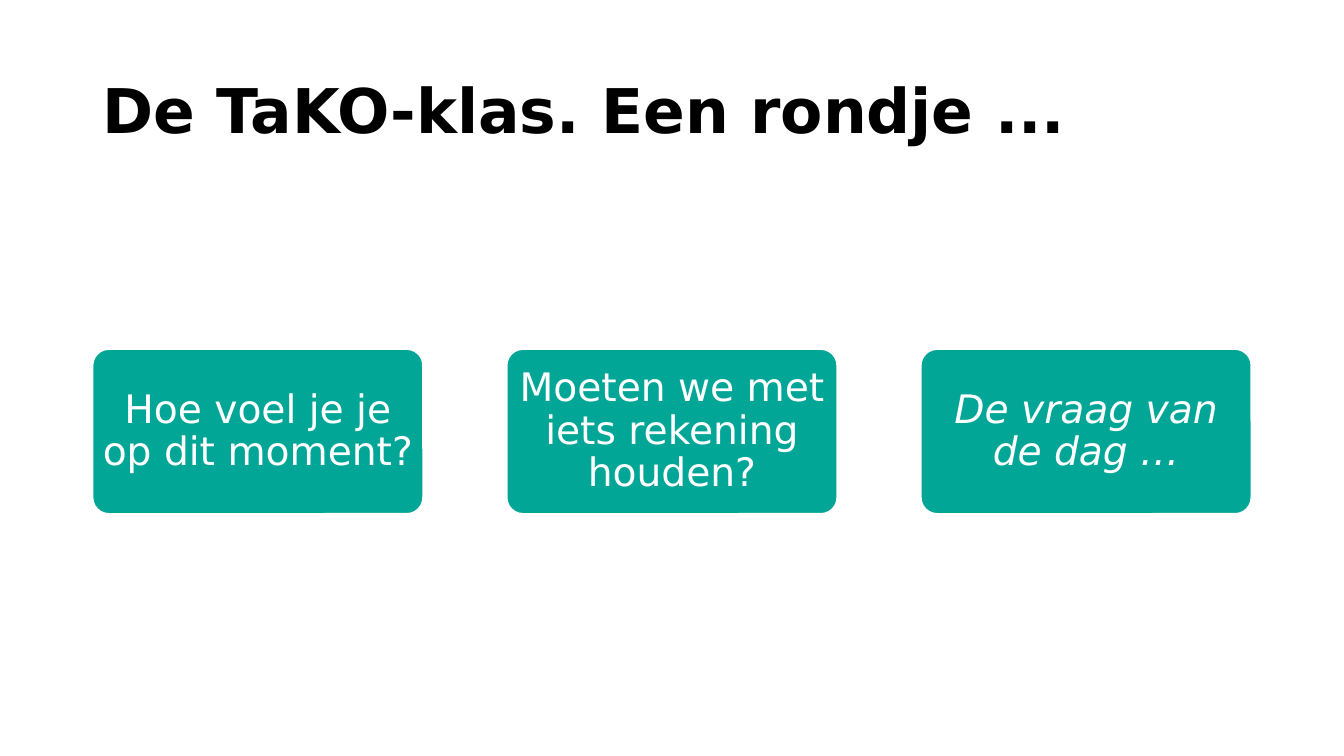
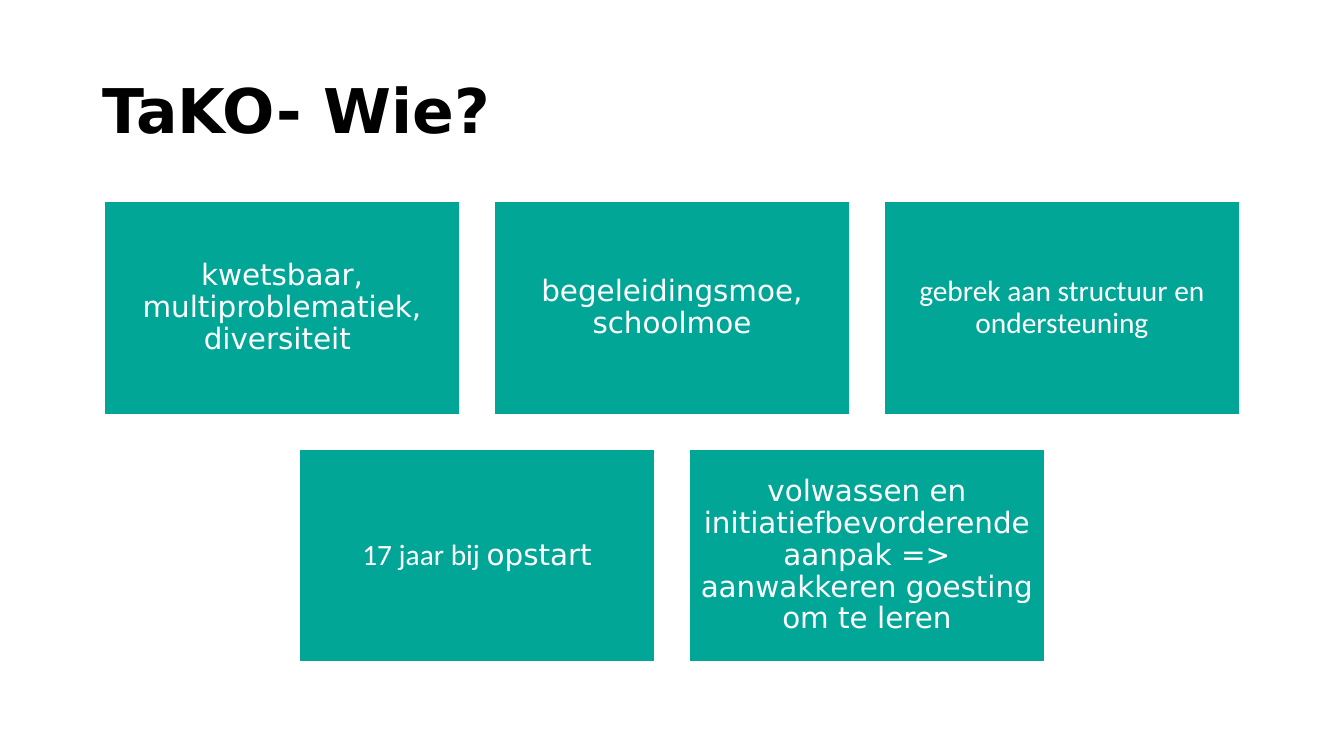
"""Build two slides with a bold title and centred rows of teal cards."""
import pptx
import pptx.dml.color
import pptx.enum.shapes
import pptx.enum.text
import pptx.util

Pt = pptx.util.Pt
SHAPES = pptx.enum.shapes.MSO_SHAPE
SLIDE_WIDTH, SLIDE_HEIGHT = 960, 540
HEADING_FONT, BODY_FONT = "DejaVu Sans", "Calibri"
BLACK, WHITE, TEAL = "000000", "FFFFFF", "02A697"

ROUNDED = {"shape": SHAPES.ROUNDED_RECTANGLE, "width": 236.4, "height": 118,
           "gap": 59.4, "outline": 1.5, "inset": 4, "size": 28}
SQUARE = {"shape": SHAPES.RECTANGLE, "width": 253.5, "height": 152,
          "gap": 25, "outline": 1, "inset": 6.5, "size": 21}


def colour(value):
    """Turn a hex string into a colour."""
    return pptx.dml.color.RGBColor.from_string(value)


def write(frame, runs, size, ink, bold=False, italic=False):
    """Write (text, font) runs as one middle-anchored paragraph."""
    frame.word_wrap = True
    frame.vertical_anchor = pptx.enum.text.MSO_ANCHOR.MIDDLE
    paragraph = frame.paragraphs[0]
    paragraph.line_spacing = 0.9
    paragraph.font.size = Pt(size)
    paragraph.font.bold = bold
    paragraph.font.italic = italic
    paragraph.font.color.rgb = colour(ink)
    paragraph.font.name = runs[0][1]
    for text, font in runs:
        run = paragraph.add_run()
        run.text = text
        if font != runs[0][1]:
            run.font.name = font
    return paragraph


def add_titled_slide(deck, title):
    """Add a blank slide with the shared title style."""
    slide = deck.slides.add_slide(deck.slide_layouts[6])
    heading = slide.shapes.add_textbox(Pt(66), Pt(28.8), Pt(828), Pt(104.4))
    write(heading.text_frame, [(title, HEADING_FONT)], 44, BLACK, bold=True)
    return slide


def add_card(slide, left, top, style, runs, italic):
    """Add one teal card with centred white text."""
    card = slide.shapes.add_shape(style["shape"], Pt(left), Pt(top),
                                  Pt(style["width"]), Pt(style["height"]))
    if style["shape"] == SHAPES.ROUNDED_RECTANGLE:
        card.adjustments[0] = 0.1
    card.shadow.inherit = False
    card.fill.solid()
    card.fill.fore_color.rgb = colour(TEAL)
    card.line.color.rgb = colour(WHITE)
    card.line.width = Pt(style["outline"])
    frame = card.text_frame
    frame.margin_left = frame.margin_right = Pt(style["inset"])
    frame.margin_top = frame.margin_bottom = Pt(style["inset"])
    paragraph = write(frame, runs, style["size"], WHITE, italic=italic)
    paragraph.alignment = pptx.enum.text.PP_ALIGN.CENTER


def add_card_row(slide, top, style, cards, italic_cards=()):
    """Centre a row of evenly spaced cards on the slide."""
    pitch = style["width"] + style["gap"]
    left = (SLIDE_WIDTH - len(cards) * pitch + style["gap"]) / 2
    for index, runs in enumerate(cards):
        add_card(slide, left + index * pitch, top, style, runs, index in italic_cards)


def main():
    """Build and save the deck."""
    deck = pptx.Presentation()
    deck.slide_width, deck.slide_height = Pt(SLIDE_WIDTH), Pt(SLIDE_HEIGHT)

    questions = add_titled_slide(deck, "De TaKO-klas. Een rondje ...")
    add_card_row(questions, 249.2, ROUNDED, [
        [("Hoe voel je je op dit moment?", HEADING_FONT)],
        [("Moeten we met iets rekening houden?", HEADING_FONT)],
        [("De vraag van de dag …", HEADING_FONT)],
    ], italic_cards=(2,))

    audience = add_titled_slide(deck, "TaKO- Wie?")
    first_row = 144
    add_card_row(audience, first_row, SQUARE, [
        [("kwetsbaar, multiproblematiek, diversiteit ", HEADING_FONT)],
        [("begeleidingsmoe, schoolmoe", HEADING_FONT)],
        [("gebrek aan structuur en ondersteuning", BODY_FONT)],
    ])
    add_card_row(audience, first_row + SQUARE["height"] + SQUARE["gap"], SQUARE, [
        [("17 jaar bij ", BODY_FONT), ("opstart", HEADING_FONT)],
        [("volwassen en initiatiefbevorderende aanpak => "
          "aanwakkeren goesting om te leren", HEADING_FONT)],
    ])
    deck.save("out.pptx")


if __name__ == "__main__":
    main()
